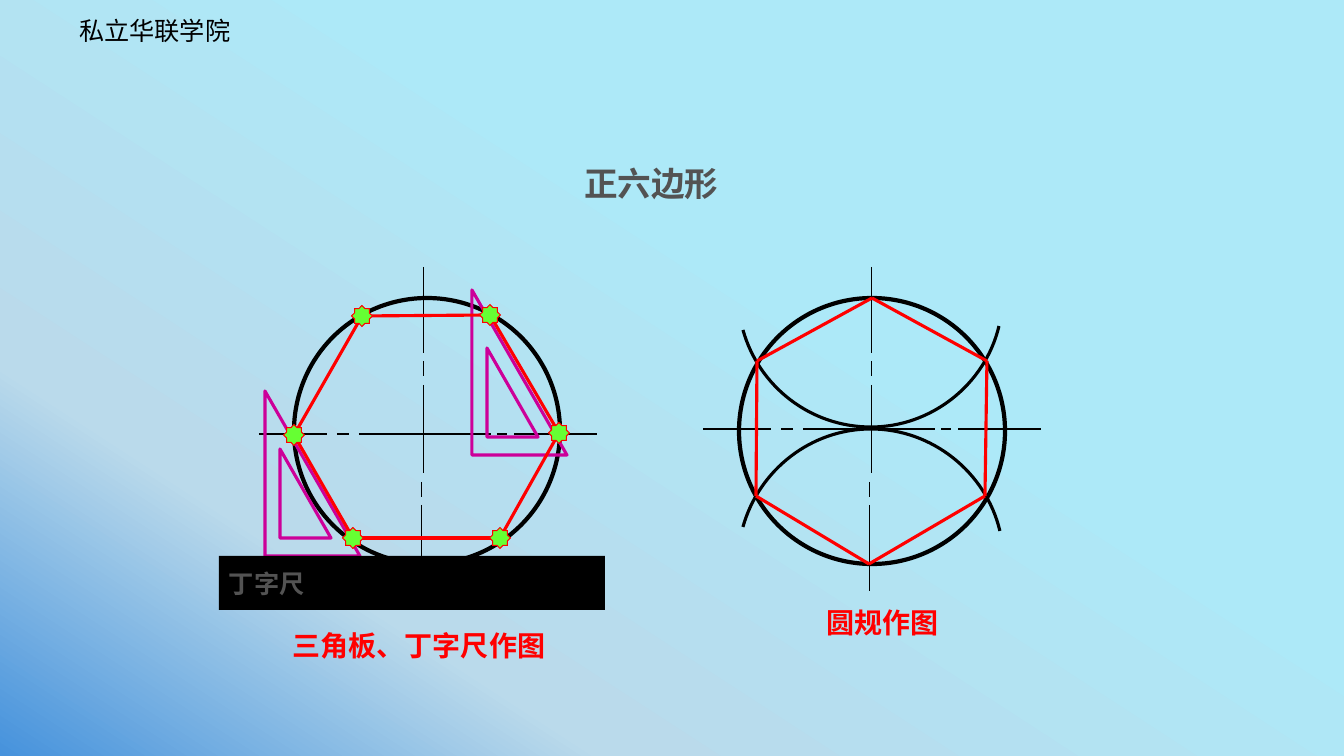
from copy import deepcopy

from lxml import etree
from pptx import Presentation
from pptx.dml.color import RGBColor
from pptx.enum.shapes import MSO_CONNECTOR, MSO_SHAPE
from pptx.enum.text import MSO_ANCHOR, MSO_AUTO_SIZE, PP_ALIGN
from pptx.oxml.ns import qn
from pptx.util import Emu, Pt

STRAIGHT = MSO_CONNECTOR.STRAIGHT
OVAL, RECTANGLE = MSO_SHAPE.OVAL, MSO_SHAPE.RECTANGLE
TRIANGLE, STAR = MSO_SHAPE.RIGHT_TRIANGLE, MSO_SHAPE.STAR_8_POINT
TOP, MIDDLE = MSO_ANCHOR.TOP, MSO_ANCHOR.MIDDLE
LEFT, CENTER = PP_ALIGN.LEFT, PP_ALIGN.CENTER
FIXED = MSO_AUTO_SIZE.NONE

EMU_PER_PX = 914400 / 100.8
CJK_FONT = "Noto Sans CJK SC"
COLORS = {
    "black": "000000",
    "gray": "535353",
    "red": "FF0000",
    "purple": "CC0099",
    "green": "66FF33",
    "deep": "4692DC",
    "mist": "BADAEB",
    "sky": "ADE9F8",
}
BACKGROUND_STOPS = [(0, "deep"), (0.24, "mist"), (0.62, "sky")]

HORIZONTAL_DASHES = [(0, 68), (100, 232), (78, 90), (255, 338), (238, 248)]
UPPER_DASHES = [(0, 86), (118, 206), (94, 109)]
LOWER_DASHES = [(238, 324), (215, 230)]
AXIS_TOP = 267
CIRCLE_TOP, DIAMETER = 298, 266

RULER_HEXAGON = [(362, 316), (490, 315), (559, 433),
                 (500, 538), (353, 538), (294, 435)]
COMPASS_HEXAGON = [(872, 298), (987, 361), (985, 496),
                   (869, 564), (756, 496), (757, 361)]
LOWER_ARC = [(743, 527), (759, 470), (811, 429), (871, 429),
             (932, 429), (986, 472), (1000, 531)]
UPPER_ARC = [(743, 330), (759, 387), (811, 427), (871, 427),
             (931, 427), (985, 385), (999, 326)]


def px(value):
    return Emu(round(value * EMU_PER_PX))


def color(name):
    return RGBColor.from_string(COLORS[name])


def write(frame, text, size=18, font=CJK_FONT, fill="gray", bold=True,
          align=LEFT, anchor=TOP, wrap=True, inset=None):
    frame.auto_size = FIXED
    frame.word_wrap = wrap
    frame.vertical_anchor = anchor
    if inset is not None:
        frame.margin_left = frame.margin_right = px(inset)
        frame.margin_top = frame.margin_bottom = px(inset)
    paragraph = frame.paragraphs[0]
    paragraph.alignment = align
    run = paragraph.add_run()
    run.text = text
    run.font.size = Pt(size)
    run.font.bold = bold
    run.font.name = font
    run.font.color.rgb = color(fill)
    properties = run.font._element
    etree.SubElement(properties, qn("a:ea")).set("typeface", font)


class Drawing:
    """Draws styled elements on the current slide, measured in pixels."""

    def __init__(self, presentation):
        layout = presentation.slide_layouts[5]
        self.slide = presentation.slides.add_slide(layout)
        self.shapes = self.slide.shapes

    def background(self, stops, angle):
        fill = self.slide.background.fill
        fill.gradient()
        fill.gradient_angle = angle
        stop_list = self.slide.element.xpath(".//a:gsLst")[0]
        stop_list.insert(1, deepcopy(stop_list[0]))
        for stop, (position, name) in zip(fill.gradient_stops, stops):
            stop.position = position
            stop.color.rgb = color(name)

    def title(self, text, left, top, width, height, **style):
        shape = self.shapes.title
        shape.left, shape.top = px(left), px(top)
        shape.width, shape.height = px(width), px(height)
        write(shape.text_frame, text, **style)

    def label(self, text, left, top, width, height, **style):
        box = self.shapes.add_textbox(px(left), px(top), px(width), px(height))
        write(box.text_frame, text, **style)

    def finish(self, shape, fill, line, weight):
        shape.shadow.inherit = False
        if fill:
            shape.fill.solid()
            shape.fill.fore_color.rgb = color(fill)
        else:
            shape.fill.background()
        if line:
            shape.line.color.rgb = color(line)
            shape.line.width = Pt(weight)
        else:
            shape.line.fill.background()
        return shape

    def shape(self, kind, left, top, width, height,
              fill=None, line=None, weight=1, shapes=None):
        target = self.shapes if shapes is None else shapes
        shape = target.add_shape(
            kind, px(left), px(top), px(width), px(height))
        return self.finish(shape, fill, line, weight)

    def segment(self, start, end, line, weight, shapes=None):
        target = self.shapes if shapes is None else shapes
        connector = target.add_connector(
            STRAIGHT, px(start[0]), px(start[1]), px(end[0]), px(end[1]))
        connector.line.color.rgb = color(line)
        connector.line.width = Pt(weight)
        etree.SubElement(connector._element.spPr, qn("a:effectLst"))

    def axes(self, left, middle, upper_x, lower_x):
        horizontal = self.shapes.add_group_shape().shapes
        for start, end in HORIZONTAL_DASHES:
            self.segment((left + start, middle), (left + end, middle),
                         "black", 1.5, horizontal)
        vertical = self.shapes.add_group_shape().shapes
        for x, dashes in ((upper_x, UPPER_DASHES), (lower_x, LOWER_DASHES)):
            for start, end in dashes:
                self.segment((x, AXIS_TOP + start), (x, AXIS_TOP + end),
                             "black", 0.75, vertical)

    def circle(self, left):
        self.shape(OVAL, left, CIRCLE_TOP, DIAMETER, DIAMETER,
                   line="black", weight=3)

    def arc(self, points):
        points = [(px(x), px(y)) for x, y in points]
        builder = self.shapes.build_freeform(*points[0])
        builder.add_line_segments(points[1:], close=False)
        shape = self.finish(builder.convert_to_shape(), None, "black", 2.25)
        outline = shape._element.xpath(".//a:path")[0]
        steps = outline.findall(qn("a:lnTo"))
        for first in range(0, len(steps), 3):
            curve = etree.SubElement(outline, qn("a:cubicBezTo"))
            for step in steps[first:first + 3]:
                curve.append(step[0])
                outline.remove(step)

    def set_square(self, left, top):
        group = self.shapes.add_group_shape().shapes
        for x, y, width, height in ((left + 15, top + 58, 51, 89),
                                    (left, top, 95, 165)):
            shift = (height - width) / 2
            triangle = self.shape(TRIANGLE, x - shift, y + shift, height,
                                  width, line="purple", weight=2.25,
                                  shapes=group)
            triangle.rotation = 90
            triangle._element.spPr.find(qn("a:xfrm")).set("flipH", "1")

    def hexagon(self, vertices):
        for start, end in zip(vertices, vertices[1:] + vertices[:1]):
            self.segment(start, end, "red", 2.25)

    def star(self, x, y, size=21):
        star = self.shape(STAR, x - size / 2, y - size / 2, size, size,
                          fill="green", line="red", weight=0.75)
        star.adjustments[0] = 0.38


def main():
    presentation = Presentation()
    presentation.slide_width, presentation.slide_height = px(1344), px(756)
    drawing = Drawing(presentation)
    drawing.background(BACKGROUND_STOPS, 57)
    drawing.label("私立华联学院", 74, 10, 296, 40, font="Noto Sans CJK JP",
                  fill="black", bold=False, inset=5)
    drawing.title("正六边形", 574, 158, 258, 50, size=24)

    drawing.circle(294)
    drawing.axes(259, 434, 423.5, 422)
    drawing.circle(739)
    drawing.axes(703.5, 429, 871.5, 870)

    drawing.set_square(265, 391)
    ruler = drawing.shape(RECTANGLE, 219, 556, 386, 54, fill="black")
    write(ruler.text_frame, "丁字尺", font="Arial", anchor=MIDDLE, wrap=False)
    caption = {"size": 20, "fill": "red", "align": CENTER}
    drawing.label("圆规作图", 752, 601, 262, 43, **caption)
    drawing.label("三角板、丁字尺作图", 268, 624, 302, 43, **caption)

    drawing.arc(LOWER_ARC)
    drawing.set_square(472, 290)
    drawing.hexagon(RULER_HEXAGON)
    for vertex in RULER_HEXAGON:
        drawing.star(*vertex)

    drawing.arc(UPPER_ARC)
    drawing.hexagon(COMPASS_HEXAGON)
    presentation.save("out.pptx")


if __name__ == "__main__":
    main()
